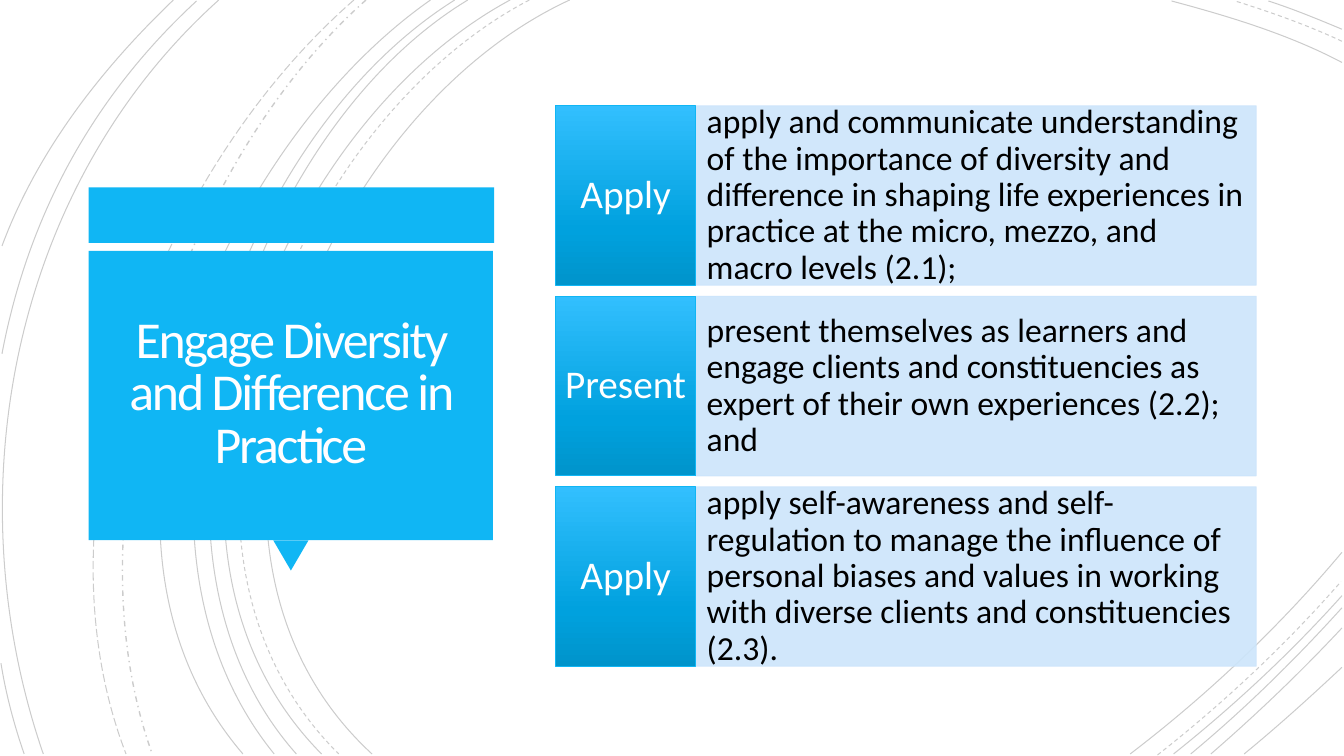
"""Build the slide on engaging diversity and difference in practice."""
import copy

from lxml import etree
from pptx import Presentation
from pptx import util as u
from pptx.dml.color import RGBColor
from pptx.enum import dml, shapes, text
from pptx.oxml import ns

TITLE = "Engage Diversity and Difference in Practice"
CARDS = [
    ("Apply", "apply and communicate understanding of the importance of diversity and difference "
              "in shaping life experiences in practice at the micro, mezzo, and macro levels (2.1);"),
    ("Present", "present themselves as learners and engage clients and constituencies as expert "
                "of their own experiences (2.2); and"),
    ("Apply", "apply self-awareness and self-regulation to manage the influence of personal "
              "biases and values in working with diverse clients and constituencies (2.3)."),
]
FONT = "Calibri"
ACCENT, PALE, WHITE, BLACK = "10B6F4", "CCE5FB", "FFFFFF", "000000"
GRADIENT = [(0, "32BFFE"), (0.69, "00A1DE"), (1, "0094CB")]
NAMESPACES = ns.namespaces("a")

CARD_LEFT, CARD_TOP, CARD_PITCH, CARD_HEIGHT = 5.51, 1.05, 1.89, 1.78
LABEL_WIDTH, DETAIL_WIDTH = 1.39, 5.56

TITLE_PANELS = [
    (shapes.MSO_SHAPE.RECTANGLE, (0.88, 1.86, 4.02, 0.55), 0),
    (shapes.MSO_SHAPE.ISOSCELES_TRIANGLE, (2.71, 5.36, 0.35, 0.3), 180),
    (shapes.MSO_SHAPE.RECTANGLE, (0.88, 2.49, 4.01, 2.87), 0),
]

SOLID, DASH = dml.MSO_LINE.SOLID, dml.MSO_LINE.DASH
LONG_DASH, DASH_DOT = dml.MSO_LINE.LONG_DASH, dml.MSO_LINE.DASH_DOT
ARCS = [
    (SOLID, [(5.65, 0), (3.15, 1.15), (1.43, 5.4), (3.69, 7.48)]),
    (SOLID, [(13.31, 0.62), (12.78, 0.34), (12.18, 0.16), (11.62, 0.01)]),
    (SOLID, [(11.21, 7.48), (11.97, 6.9), (12.69, 6.22), (13.31, 5.48)]),
    (DASH, [(5.25, 0), (2.85, 1.25), (1.23, 5.37), (3.36, 7.48)]),
    (DASH, [(13.31, 0.41), (12.97, 0.25), (12.6, 0.12), (12.25, 0.01)]),
    (DASH, [(11.48, 7.49), (12.13, 6.98), (12.75, 6.4), (13.3, 5.77)]),
    (SOLID, [(5.06, 0), (2.7, 1.27), (1.1, 5.37), (3.19, 7.48)]),
    (SOLID, [(13.31, 0.29), (13.07, 0.19), (12.83, 0.09), (12.58, 0.01)]),
    (SOLID, [(11.64, 7.48), (12.23, 7.01), (12.8, 6.48), (13.31, 5.91)]),
    (SOLID, [(4.64, 0), (2.44, 1.33), (1.1, 5.41), (2.94, 7.48)]),
    (SOLID, [(11.81, 7.48), (12.34, 7.04), (12.84, 6.55), (13.31, 6.03)]),
    (SOLID, [(4.51, 0), (2.31, 1.38), (0.97, 5.33), (2.72, 7.48)]),
    (SOLID, [(12.01, 7.48), (12.46, 7.09), (12.9, 6.67), (13.31, 6.23)]),
    (SOLID, [(4.27, 0), (2.17, 1.47), (0.53, 5.29), (2.41, 7.48)]),
    (SOLID, [(12.34, 7.48), (12.67, 7.21), (12.99, 6.92), (13.31, 6.62)]),
    (DASH_DOT, [(3.63, 0), (1.76, 1.66), (0.65, 5.09), (1.51, 7.48)]),
    (LONG_DASH, [(3.51, 0), (1.57, 1.69), (0.29, 4.99), (1.25, 7.48)]),
    (SOLID, [(2.17, 0), (0.11, 1.85), (-0.46, 4.9), (0.43, 7.48)]),
    (SOLID, [(1.95, 0.01), (0.92, 0.96), (0.28, 2.14), (0.02, 3.51)]),
    (SOLID, [(0.01, 6.58), (0.06, 6.89), (0.14, 7.19), (0.24, 7.48)]),
    (SOLID, [(1.72, 0), (1, 0.69), (0.37, 1.5), (0.02, 2.44)]),
]


def paint(fill, color, opacity=100):
    """Give a fill one solid colour, with opacity in percent."""
    fill.solid()
    fill.fore_color.rgb = RGBColor.from_string(color)
    if opacity < 100:
        node = fill._xPr.find("a:solidFill/a:srgbClr", NAMESPACES)
        etree.SubElement(node, ns.qn("a:alpha"), val=str(opacity * 1000))


def paint_gradient(fill):
    """Give a fill the downward blue gradient."""
    fill.gradient()
    fill.gradient_angle = 270
    stops = fill._xPr.find("a:gradFill/a:gsLst", NAMESPACES)
    stops.append(copy.deepcopy(stops[-1]))
    for stop, (position, color) in zip(fill.gradient_stops, GRADIENT):
        stop.position = position
        stop.color.rgb = RGBColor.from_string(color)


def add_arc(slide, dash, points):
    """Draw one thin translucent curve from its four Bézier points."""
    start, *others = [(u.Inches(x), u.Inches(y)) for x, y in points]
    builder = slide.shapes.build_freeform(*start)
    builder.add_line_segments(others, close=False)
    shape = builder.convert_to_shape()
    outline = shape.element.find(".//a:path", NAMESPACES)
    curve = etree.SubElement(outline, ns.qn("a:cubicBezTo"))
    for segment in outline.findall("a:lnTo", NAMESPACES):
        curve.append(segment[0])
        outline.remove(segment)
    shape.shadow.inherit = False
    shape.fill.background()
    paint(shape.line.fill, BLACK, 20)
    shape.line.width = u.Pt(1 if dash == DASH_DOT else 0.75)
    shape.line.dash_style = dash


def add_block(slide, kind, box):
    """Add a preset shape without shadow."""
    shape = slide.shapes.add_shape(kind, *map(u.Inches, box))
    shape.shadow.inherit = False
    return shape


def write(shape, words, size, color, align, spacing, inset_x, inset_y=0):
    """Write one formatted paragraph, centred vertically in a shape."""
    frame = shape.text_frame
    frame.text = words
    frame.word_wrap = True
    frame.auto_size = text.MSO_AUTO_SIZE.NONE
    frame.vertical_anchor = text.MSO_ANCHOR.MIDDLE
    frame.margin_left = frame.margin_right = u.Inches(inset_x)
    frame.margin_top = frame.margin_bottom = u.Inches(inset_y)
    paragraph = frame.paragraphs[0]
    paragraph.alignment = align
    paragraph.line_spacing = spacing
    font = paragraph.runs[0].font
    font.name, font.size = FONT, u.Pt(size)
    paint(font.fill, color)
    return font


def add_title(slide):
    """Draw the blue callout and put the title on it."""
    for kind, box, rotation in TITLE_PANELS:
        panel = add_block(slide, kind, box)
        panel.rotation = rotation
        paint(panel.fill, ACCENT)
        panel.line.fill.background()
    title = slide.shapes.title
    title.left, title.top, title.width, title.height = map(u.Inches, (0.97, 2.58, 3.83, 2.68))
    font = write(title, TITLE, 37, "FFFEFF", text.PP_ALIGN.CENTER, 0.85, 0.25, 0.25)
    font._element.set("spc", "-150")
    title.element.getparent().append(title.element)


def add_card(slide, row, label_words, detail_words):
    """Add one row: the pale detail box and its blue label."""
    top = CARD_TOP + row * CARD_PITCH
    rectangle = shapes.MSO_SHAPE.RECTANGLE
    detail = add_block(slide, rectangle, (CARD_LEFT + LABEL_WIDTH, top, DETAIL_WIDTH, CARD_HEIGHT))
    paint(detail.fill, PALE, 90)
    paint(detail.line.fill, PALE, 90)
    write(detail, detail_words, 24, BLACK, text.PP_ALIGN.LEFT, 0.9, 0.11)
    label = add_block(slide, rectangle, (CARD_LEFT, top, LABEL_WIDTH, CARD_HEIGHT))
    paint_gradient(label.fill)
    paint(label.line.fill, ACCENT)
    write(label, label_words, 28, WHITE, text.PP_ALIGN.CENTER, 0.9, 0.07)
    detail.line.width = label.line.width = u.Pt(0.75)


def main():
    """Assemble and save the slide."""
    presentation = Presentation()
    presentation.slide_width, presentation.slide_height = u.Inches(13.33), u.Inches(7.5)
    slide = presentation.slides.add_slide(presentation.slide_layouts[5])
    paint(slide.background.fill, WHITE)
    for dash, points in ARCS:
        add_arc(slide, dash, points)
    add_title(slide)
    for row, (label_words, detail_words) in enumerate(CARDS):
        add_card(slide, row, label_words, detail_words)
    presentation.save("out.pptx")


if __name__ == "__main__":
    main()
